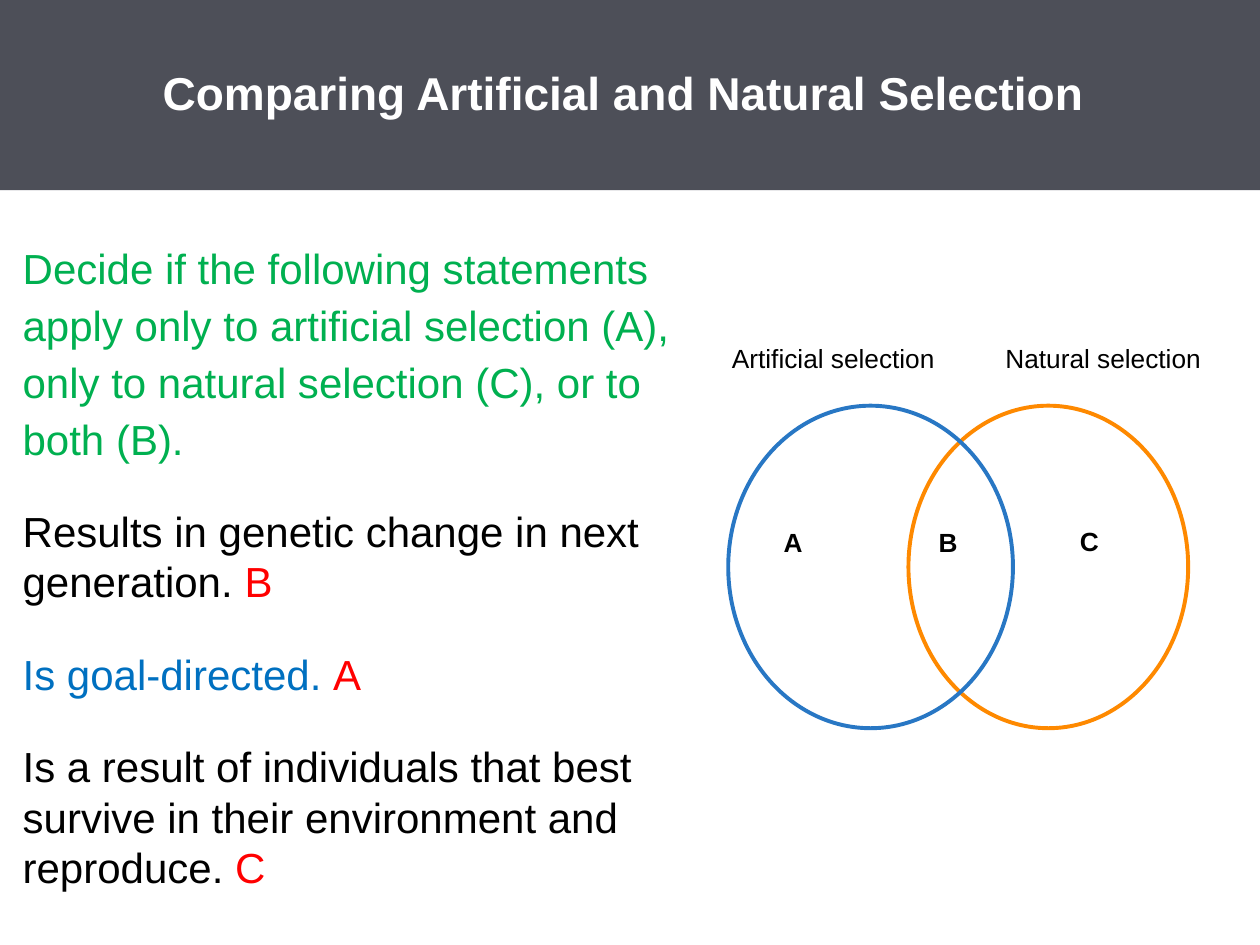
from lxml import etree
from pptx import Presentation
from pptx.dml.color import RGBColor
from pptx.enum import shapes, text
from pptx.oxml import ns
from pptx.util import Inches, Pt

SLATE = RGBColor(0x4D, 0x4F, 0x58)
WHITE = RGBColor(0xFF, 0xFF, 0xFF)
BLACK = RGBColor(0, 0, 0)
GREEN = RGBColor(0x00, 0xB0, 0x50)
RED = RGBColor(0xFF, 0, 0)
BLUE = RGBColor(0x00, 0x70, 0xC0)
ORANGE_RING = RGBColor(0xFE, 0x89, 0x00)
BLUE_RING = RGBColor(0x28, 0x77, 0xC4)


def place(shape, left, top, width, height):
    shape.left, shape.top = Inches(left), Inches(top)
    shape.width, shape.height = Inches(width), Inches(height)


def set_font(paragraph, size, color, bold=False):
    font = paragraph.font
    font.name, font.size, font.bold = "Arial", Pt(size), bold
    if color is not None:
        font.color.rgb = color


prs = Presentation()
prs.slide_width, prs.slide_height = Inches(10), Inches(7.5)
slide = prs.slides.add_slide(prs.slide_layouts[1])

# Title band
title = slide.shapes.title
place(title, 0, 0, 10, 1.51)
title.fill.solid()
title.fill.fore_color.rgb = SLATE
heading = title.text_frame
heading.text = "Comparing Artificial and Natural Selection"
heading.auto_size = text.MSO_AUTO_SIZE.NONE
heading.vertical_anchor = text.MSO_ANCHOR.MIDDLE
heading.margin_left, heading.margin_right = Inches(1.29), Inches(0.17)
heading.margin_top = heading.margin_bottom = Inches(0.07)
heading.paragraphs[0].alignment = text.PP_ALIGN.LEFT
heading.paragraphs[0].line_spacing = 0.95
set_font(heading.paragraphs[0], 26.3, WHITE, bold=True)

# Instruction and statements, each statement with its answer
statements = [
    ("Decide if the following statements apply only to artificial selection (A), "
     "only to natural selection (C), or to both (B).", GREEN, ""),
    ("Results in genetic change in next generation. ", BLACK, "B"),
    ("Is goal-directed. ", BLUE, "A"),
    ("Is a result of individuals that best survive in their environment "
     "and reproduce. ", BLACK, "C"),
]
body = slide.placeholders[1]
place(body, 0, 1.77, 5.34, 5.46)
exercise = body.text_frame
exercise.auto_size = text.MSO_AUTO_SIZE.NONE
exercise.vertical_anchor = text.MSO_ANCHOR.TOP
exercise.margin_left, exercise.margin_right = Inches(0.18), 0
exercise.margin_top = exercise.margin_bottom = Inches(0.1)
for i, (statement, color, answer) in enumerate(statements):
    line = exercise.paragraphs[0] if i == 0 else exercise.add_paragraph()
    line.space_before = Pt(24 if i else 8.4)
    line.line_spacing = 1.0 if i else 1.13
    set_font(line, 24, None)
    for words, ink in ((statement, color), (answer, RED)):
        if words:
            run = line.add_run()
            run.text = words
            run.font.color.rgb = ink
    props = line._p.get_or_add_pPr()
    props.set("marL", "0")
    props.set("indent", "0")
    no_bullet = etree.Element(ns.qn("a:buNone"))
    props.find(ns.qn("a:defRPr")).addprevious(no_bullet)

# Venn diagram rings
for left, width, color in ((7.21, 2.22, ORANGE_RING), (5.78, 2.26, BLUE_RING)):
    ring = slide.shapes.add_shape(shapes.MSO_SHAPE.OVAL, Inches(left), Inches(3.22),
                                  Inches(width), Inches(2.56))
    ring.shadow.inherit = False
    ring.fill.background()
    ring.line.color.rgb = color
    ring.line.width = Pt(2.25)

# Venn diagram labels: set names above, region letters inside
labels = [
    ("Artificial selection", 5.81, 2.63, 1.63, False),
    ("Natural selection", 7.98, 2.63, 1.57, False),
    ("A", 6.22, 4.09, 0.15, True),
    ("B", 7.45, 4.09, 0.15, True),
    ("C", 8.57, 4.08, 0.15, True),
]
for words, left, top, width, bold in labels:
    label = slide.shapes.add_textbox(Inches(left), Inches(top),
                                     Inches(width), Inches(0.37)).text_frame
    label.word_wrap = False
    label.margin_left = label.margin_right = 0
    label.text = words
    label.paragraphs[0].line_spacing = 1.15
    label.paragraphs[0].space_before = Pt(3)
    set_font(label.paragraphs[0], 15, BLACK, bold)

prs.save("out.pptx")
